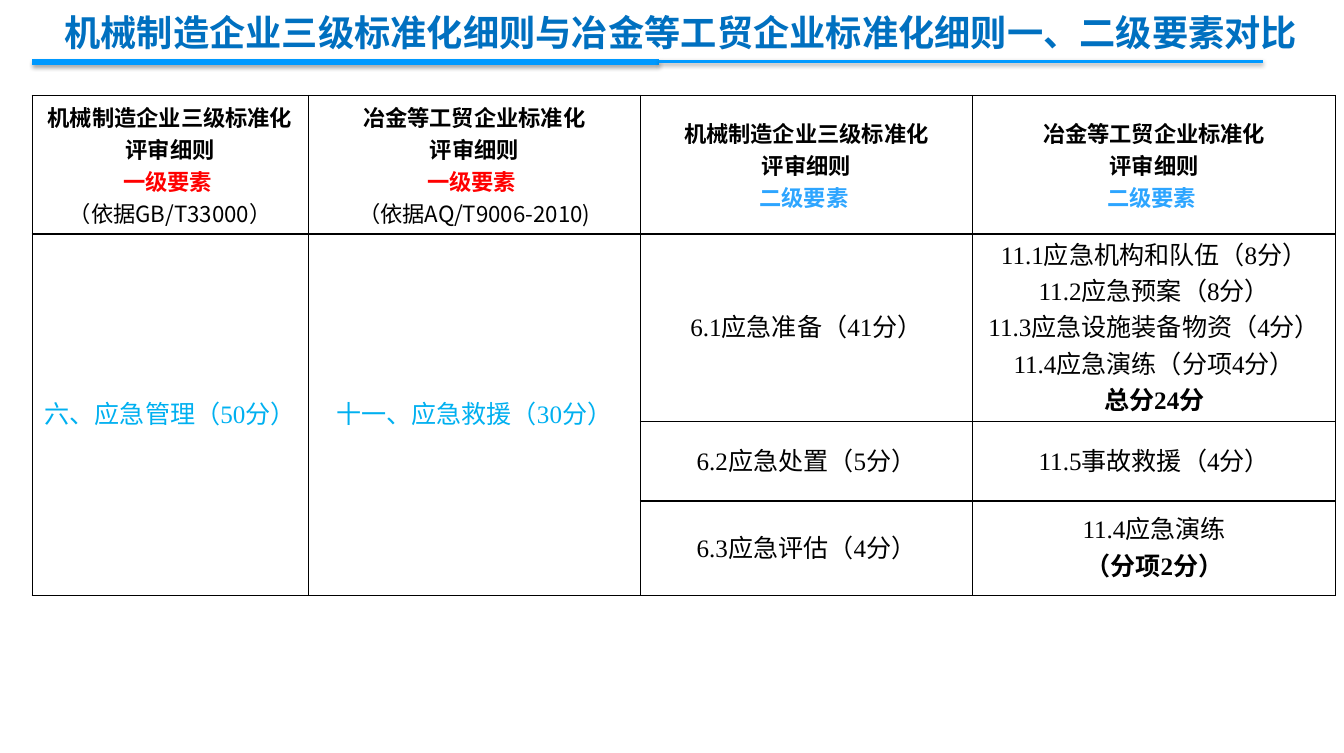
from lxml import etree
from pptx import Presentation
from pptx.dml.color import RGBColor
from pptx.enum import text
from pptx.oxml import parse_xml
from pptx.oxml.ns import nsdecls, qn
from pptx.util import Inches, Pt

BLACK = RGBColor(0x00, 0x00, 0x00)
RED = RGBColor(0xFF, 0x00, 0x00)
TITLE_BLUE = RGBColor(0x00, 0x70, 0xC0)
RULE_BLUE = RGBColor(0x00, 0x99, 0xFF)
LEVEL_BLUE = RGBColor(0x2D, 0xA5, 0xFF)
SECTION_BLUE = RGBColor(0x00, 0xB0, 0xF0)
SANS, SERIF = "Noto Sans CJK SC", "Times New Roman"

MACHINERY = ["机械制造企业三级标准化", "评审细则"]
METALLURGY = ["冶金等工贸企业标准化", "评审细则"]
# Each header: standard, element level, its colour, basis
HEADERS = [
    (MACHINERY, "一级要素 ", RED, "（依据GB/T33000）"),
    (METALLURGY, "一级要素 ", RED, "（依据AQ/T9006-2010)"),
    (MACHINERY, "二级要素 ", LEVEL_BLUE, None),
    (METALLURGY, "二级要素 ", LEVEL_BLUE, None),
]
SECTIONS = ["六、应急管理（50分）", "十一、应急救援（30分）"]
# Each row: machinery element, metallurgy elements, metallurgy line in bold
ELEMENTS = [
    ("6.1应急准备（41分）",
     ["11.1应急机构和队伍（8分）", "11.2应急预案（8分）",
      "11.3应急设施装备物资（4分）", "11.4应急演练（分项4分）"], "总分24分"),
    ("6.2应急处置（5分）", ["11.5事故救援（4分）"], None),
    ("6.3应急评估（4分）", ["11.4应急演练"], "（分项2分）"),
]
COLUMN_WIDTHS = [2.75, 3.31, 3.31, 3.62]
ROW_HEIGHTS = [1.23, 1.65, 0.79, 0.94]


def write_line(frame, line, size=18, color=BLACK, bold=False, latin=SERIF):
    """Add a centred paragraph, using the first one while it is empty."""
    paragraph = frame.paragraphs[0]
    if paragraph.runs:
        paragraph = frame.add_paragraph()
    paragraph.alignment = text.PP_ALIGN.CENTER
    run = paragraph.add_run()
    run.text = line
    font = run.font
    font.size, font.bold, font.name = Pt(size), bold, latin
    font.color.rgb = color
    east_asian = etree.SubElement(run._r.get_or_add_rPr(), qn("a:ea"))
    east_asian.set("typeface", SANS)


def draw_title(slide, left, top, width, height):
    title = slide.shapes.title
    title.left, title.top = Inches(left), Inches(top)
    title.width, title.height = Inches(width), Inches(height)
    frame = title.text_frame
    frame.auto_size = text.MSO_AUTO_SIZE.NONE
    frame.vertical_anchor = text.MSO_ANCHOR.MIDDLE
    write_line(frame, "机械制造企业三级标准化细则与冶金等工贸企业标准化细则一、二级要素对比",
               size=26, color=TITLE_BLUE, bold=True, latin=SANS)


def draw_rule(slide, left, right, y, weight, shadow_alpha, shadow_distance):
    rule = slide.shapes.add_connector(1, Inches(left), Inches(y), Inches(right), Inches(y))
    rule.line.color.rgb = RULE_BLUE
    rule.line.width = Pt(weight)
    rule._element.spPr.append(parse_xml(
        f'<a:effectLst {nsdecls("a")}><a:outerShdw blurRad="{Pt(3.1)}" '
        f'dist="{Pt(shadow_distance)}" dir="5400000" rotWithShape="0">'
        f'<a:srgbClr val="000000"><a:alpha val="{shadow_alpha * 1000}"/></a:srgbClr>'
        '</a:outerShdw></a:effectLst>'))


def style_cell(cell):
    cell.vertical_anchor = text.MSO_ANCHOR.MIDDLE
    properties = cell._tc.get_or_add_tcPr()
    for side in ("lnL", "lnR", "lnT", "lnB"):
        properties.append(parse_xml(
            f'<a:{side} {nsdecls("a")} w="{Pt(1)}"><a:solidFill>'
            f'<a:srgbClr val="{BLACK}"/></a:solidFill></a:{side}>'))
    cell.fill.background()


def fill_header(cell, standard, level, level_color, basis):
    frame = cell.text_frame
    for line in standard:
        write_line(frame, line, size=16, bold=True, latin=SANS)
    write_line(frame, level, size=16, color=level_color, bold=True, latin=SANS)
    if basis:
        write_line(frame, basis, size=16, latin=SANS)


def fill_body(cell, lines, bold_line=None, color=BLACK):
    cell.margin_left = cell.margin_right = cell.margin_top = Inches(0.01)
    cell.margin_bottom = Inches(0.05)
    for line in lines:
        write_line(cell.text_frame, line, color=color)
    if bold_line:
        write_line(cell.text_frame, bold_line, bold=True)


def draw_comparison(slide, left, top):
    table = slide.shapes.add_table(
        len(ROW_HEIGHTS), len(COLUMN_WIDTHS), Inches(left), Inches(top),
        Inches(sum(COLUMN_WIDTHS)), Inches(sum(ROW_HEIGHTS))).table
    table.first_row = table.horz_banding = False
    for column, width in zip(table.columns, COLUMN_WIDTHS):
        column.width = Inches(width)
    for row, height in zip(table.rows, ROW_HEIGHTS):
        row.height = Inches(height)
    for cell in table.iter_cells():
        style_cell(cell)
    for column, header in enumerate(HEADERS):
        fill_header(table.cell(0, column), *header)
    for column, section in enumerate(SECTIONS):
        table.cell(1, column).merge(table.cell(len(ELEMENTS), column))
        fill_body(table.cell(1, column), [section], color=SECTION_BLUE)
    for row, (machinery, metallurgy, bold_line) in enumerate(ELEMENTS, start=1):
        fill_body(table.cell(row, 2), [machinery])
        fill_body(table.cell(row, 3), metallurgy, bold_line)


def main():
    deck = Presentation()
    deck.slide_width, deck.slide_height = Inches(13.39), Inches(7.5)
    slide = deck.slides.add_slide(deck.slide_layouts.get_by_name("Title Only"))
    draw_rule(slide, 0.32, 6.57, 0.62, weight=4, shadow_alpha=35, shadow_distance=1.8)
    draw_rule(slide, 6.57, 12.58, 0.61, weight=2, shadow_alpha=38, shadow_distance=1.6)
    draw_comparison(slide, 0.32, 0.95)
    draw_title(slide, -0.02, 0.05, 13.62, 0.54)
    deck.save("out.pptx")


if __name__ == "__main__":
    main()
